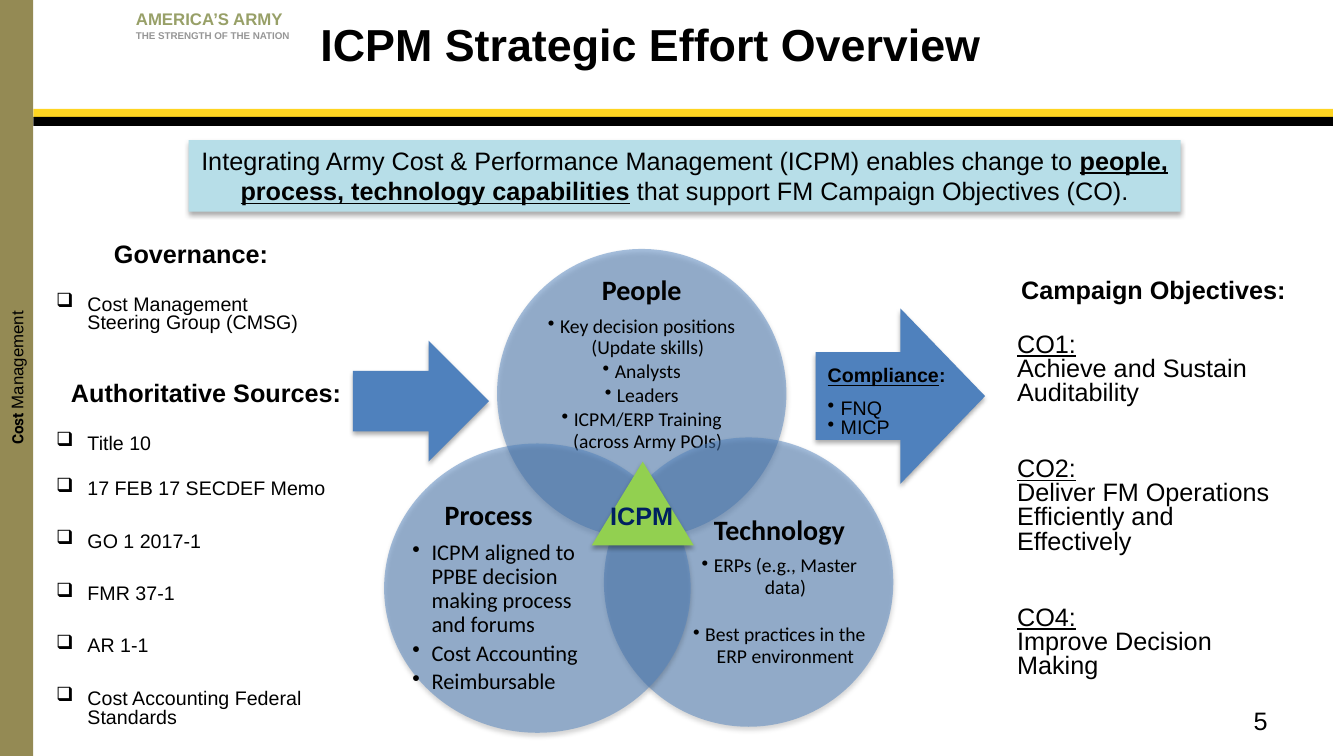
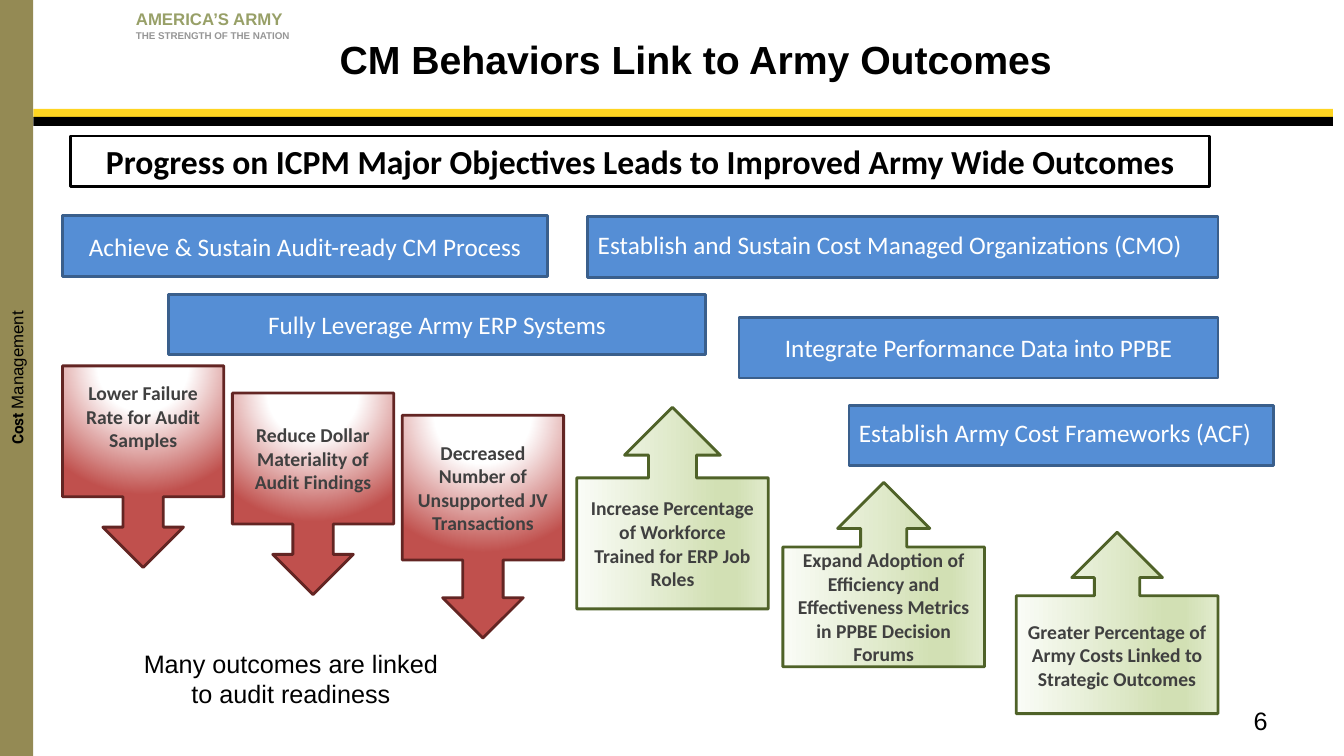
import dataclasses

import pptx
import pptx.dml.color
import pptx.enum.shapes
import pptx.enum.text
import pptx.oxml
import pptx.oxml.ns
import pptx.util

SHAPE = pptx.enum.shapes.MSO_SHAPE
ALIGN = pptx.enum.text.PP_ALIGN
ANCHOR = pptx.enum.text.MSO_ANCHOR
qn = pptx.oxml.ns.qn

# Grid: 75 rows fill the slide height, columns are as wide as rows are high
SLIDE_W, SLIDE_H = pptx.util.Inches(13.33), pptx.util.Inches(7.5)
CELL = SLIDE_H / 75

# Shared colours
BLACK, WHITE = "000000", "FFFFFF"
OLIVE, GOLD = "948A54", "FFD521"
BLUE, PALE_BLUE, GREEN = "4F81BD", "B7DEE8", "92D050"
OBJECTIVE_BLUE, OBJECTIVE_EDGE = "558ED5", "3A5F8C"
RED_EDGE, GREEN_EDGE, OUTCOME_TEXT = "632523", "4F6228", "404040"

# Gradients: stops and direction
RED_GLOW = ([(0, WHITE), (35, WHITE), (100, "C0504D")],
            '<a:path path="circle"><a:fillToRect l="50000" t="-80000" '
            'r="50000" b="180000"/></a:path>')
GREEN_FADE = ([(0, "FAFCF7"), (74, "D2E0B4"), (83, "D2E0B4"), (100, "E1EBCD")],
              '<a:lin ang="5400000" scaled="0"/>')


@dataclasses.dataclass
class Style:
    size: float = 18
    font: str = "Arial"
    color: str = BLACK
    bold: bool = False
    underline: bool = False
    align: object = ALIGN.LEFT
    spacing: float = 1.0
    before: float = 0
    indent: float = 0    # inches
    hanging: float = 0   # inches
    bullet: str = ""

    def but(self, **changes):
        return dataclasses.replace(self, **changes)


BODY = Style()
CENTERED = Style(align=ALIGN.CENTER)
TITLE = Style(bold=True)
TIGHT = Style(spacing=0.8)
HEADING = TIGHT.but(bold=True, align=ALIGN.CENTER)
CHECK = TIGHT.but(size=14, indent=0.31, hanging=0.31, bullet="❑")
CIRCLE_HEAD = Style(20, "Calibri", bold=True, align=ALIGN.CENTER, spacing=0.9)
CIRCLE_ITEM = Style(14, "Calibri", align=ALIGN.CENTER, spacing=0.9, before=2,
                    indent=0.12, hanging=0.12, bullet="•")
OBJECTIVE = Style(18, "Calibri", WHITE, align=ALIGN.CENTER)
OUTCOME = Style(14, "Calibri", OUTCOME_TEXT, bold=True, align=ALIGN.CENTER)


def rgb(color):
    return pptx.dml.color.RGBColor.from_string(color)


def cells(*counts):
    return [round(count * CELL) for count in counts]


def drawing_xml(tag, inner, attributes=""):
    return pptx.oxml.parse_xml(
        f'<a:{tag} {pptx.oxml.ns.nsdecls("a")} {attributes}>{inner}</a:{tag}>')


# Text
def set_font(font, style):
    font.size = pptx.util.Pt(style.size)
    font.name = style.font
    font.bold = style.bold
    font.underline = style.underline
    font.color.rgb = rgb(style.color)


def write(frame, paragraphs, anchor=ANCHOR.TOP, margins=(0.1, 0.05), wrap=True):
    """Each paragraph is (style, text) or (style, [(run style, text), ...])."""
    frame.word_wrap = wrap
    frame.vertical_anchor = anchor
    frame.margin_left = frame.margin_right = pptx.util.Inches(margins[0])
    frame.margin_top = frame.margin_bottom = pptx.util.Inches(margins[1])
    for number, (style, content) in enumerate(paragraphs):
        paragraph = frame.add_paragraph() if number else frame.paragraphs[0]
        properties = paragraph._p.get_or_add_pPr()
        properties.set("marL", str(pptx.util.Inches(style.indent)))
        properties.set("indent", str(-pptx.util.Inches(style.hanging)))
        if style.bullet:
            properties.append(drawing_xml("buChar", "", f'char="{style.bullet}"'))
        paragraph.alignment = style.align
        paragraph.line_spacing = style.spacing
        if number:
            paragraph.space_before = pptx.util.Pt(style.before)
        set_font(paragraph.font, style)
        if isinstance(content, str):
            paragraph.add_run().text = content
            continue
        for run_style, text in content:
            run = paragraph.add_run()
            run.text = text
            set_font(run.font, run_style)


def add_text(slide, area, paragraphs, **layout):
    box = slide.shapes.add_textbox(*cells(*area))
    write(box.text_frame, paragraphs, **layout)


# Shapes
def add_block(slide, kind, area, fill=None, edge=None, gradient=None,
              alpha=None, shadow=False):
    block = slide.shapes.add_shape(kind, *cells(*area))
    block.shadow.inherit = False
    properties = block._element.spPr
    if gradient:
        stops, direction = gradient
        listed = "".join(f'<a:gs pos="{share * 1000}"><a:srgbClr val="{color}"/></a:gs>'
                         for share, color in stops)
        properties.find(qn("a:prstGeom")).addnext(drawing_xml(
            "gradFill", f"<a:gsLst>{listed}</a:gsLst>{direction}", 'rotWithShape="1"'))
    else:
        block.fill.solid()
        block.fill.fore_color.rgb = rgb(fill)
    if alpha:
        next(properties.iter(qn("a:srgbClr"))).append(
            drawing_xml("alpha", "", f'val="{alpha * 1000}"'))
    if edge:
        block.line.color.rgb = rgb(edge)
        block.line.width = pptx.util.Pt(2)
    else:
        block.line.fill.background()
    if shadow:
        properties.find(qn("a:effectLst")).append(drawing_xml(
            "outerShdw",
            f'<a:srgbClr val="{BLACK}"><a:alpha val="32000"/></a:srgbClr>',
            f'blurRad="{pptx.util.Pt(3.5)}" dist="{pptx.util.Pt(2.2)}" '
            'dir="5400000" rotWithShape="0"'))
    return block


def add_circle(slide, area, text_area, paragraphs):
    add_block(slide, SHAPE.OVAL, area, BLUE, alpha=50, shadow=True)
    add_text(slide, text_area, paragraphs, anchor=ANCHOR.MIDDLE, margins=(0, 0))


def add_objective(slide, area, text, style=OBJECTIVE):
    block = add_block(slide, SHAPE.RECTANGLE, area, OBJECTIVE_BLUE, OBJECTIVE_EDGE)
    write(block.text_frame, [(style, text)], anchor=ANCHOR.MIDDLE)


def add_falling_outcome(slide, area, text, lift=0):
    block = add_block(slide, SHAPE.DOWN_ARROW_CALLOUT, area, edge=RED_EDGE,
                      gradient=RED_GLOW)
    write(block.text_frame, [(OUTCOME, text)], anchor=ANCHOR.MIDDLE)
    block.text_frame.margin_bottom += pptx.util.Inches(lift)


def add_rising_outcome(slide, area, text):
    block = add_block(slide, SHAPE.RIGHT_ARROW_CALLOUT, area, edge=GREEN_EDGE,
                      gradient=GREEN_FADE)
    block.rotation = 270
    write(block.text_frame, [(OUTCOME, text)], anchor=ANCHOR.MIDDLE)
    block.text_frame._txBody.bodyPr.set("vert", "vert")


# Parts that all slides share
def add_slide(deck, title, title_area, title_style, number):
    slide = deck.slides.add_slide(deck.slide_layouts[6])
    add_text(slide, (12.5, 0, 26.7, 5),
             [(Style(12, color="98A068", bold=True), "AMERICA’S ARMY"),
              (Style(7, color="969696", bold=True), "THE STRENGTH OF THE NATION")],
             anchor=ANCHOR.MIDDLE, wrap=False)
    for top, color in ((10.8, GOLD), (11.6, BLACK)):
        add_block(slide, SHAPE.RECTANGLE, (3.3, top, 128.9, 0.9), color)
    strip = add_block(slide, SHAPE.RECTANGLE, (0, 0, 3.3, 75), OLIVE)
    write(strip.text_frame,
          [(CENTERED.but(size=12), [(Style(11, "Roboto", bold=True), "Cost "),
                                    (Style(12), "Management")])],
          anchor=ANCHOR.MIDDLE, margins=(0.04, 0.04))
    strip.text_frame._txBody.bodyPr.set("vert", "vert270")
    add_text(slide, title_area, [(title_style, title)])
    add_text(slide, (95.6, 69.5, 31.1, 4), [(BODY.but(align=ALIGN.RIGHT), str(number))])
    return slide


def build_overview(deck):
    slide = add_slide(deck, "ICPM Strategic Effort Overview", (30.8, 1.2, 73.3, 6.4),
                      TITLE.but(size=32), 5)

    # Banner
    banner = add_block(slide, SHAPE.RECTANGLE, (18.7, 13.9, 98.4, 7.1), PALE_BLUE,
                       shadow=True)
    write(banner.text_frame, [(CENTERED, [
        (BODY, "Integrating Army Cost & Performance Management (ICPM) enables change to "),
        (BODY.but(bold=True, underline=True), "people, process, technology capabilities"),
        (BODY, " that support FM Campaign Objectives (CO).")])])

    # Campaign objectives
    objectives = [("CO1:", "Achieve and Sustain Auditability"),
                  ("CO2:", "Deliver FM Operations Efficiently and Effectively"),
                  ("CO4:", "Improve Decision Making")]
    lines = [(HEADING, "Campaign Objectives:")]
    for code, aim in objectives:
        gap = 21 if len(lines) == 1 else 37
        lines += [(TIGHT.but(underline=True, before=gap), code), (TIGHT, aim)]
    add_text(slide, (99.9, 27.3, 29, 42.7), lines)

    # Overlapping circles
    add_circle(slide, (49.3, 24.7, 28.7, 28.7), (53.1, 29.7, 21.1, 12.9), [
        (CIRCLE_HEAD, "People"),
        (CIRCLE_ITEM.but(before=7), "Key decision positions (Update skills)"),
        (CIRCLE_ITEM, "Analysts"),
        (CIRCLE_ITEM, "Leaders"),
        (CIRCLE_ITEM, "ICPM/ERP Training (across Army POIs)")])
    add_circle(slide, (59.9, 43.4, 28.7, 28.7), (68.7, 50.8, 17.2, 15.8), [
        (CIRCLE_HEAD, "Technology"),
        (CIRCLE_ITEM.but(before=7), "ERPs (e.g., Master data)"),
        (CIRCLE_ITEM.but(before=19), "Best practices in the ERP environment")])
    process_item = CIRCLE_ITEM.but(size=16, align=ALIGN.LEFT, before=3,
                                   indent=0.19, hanging=0.19)
    add_circle(slide, (38.1, 44, 30.4, 28.7), (40.9, 51.4, 18.2, 15.8), [
        (CIRCLE_HEAD.but(align=ALIGN.LEFT, indent=0.32), "Process"),
        (process_item.but(before=7),
         "ICPM aligned to PPBE decision making process and forums"),
        (process_item, "Cost Accounting"),
        (process_item, "Reimbursable")])

    # Arrows into and out of the circles
    for area in ((80.9, 30.6, 16.8, 17.4), (35, 33.8, 13.5, 12)):
        add_block(slide, SHAPE.RIGHT_ARROW, area, BLUE, shadow=True)
    compliance = TIGHT.but(size=14, bold=True)
    result = TIGHT.but(size=14, indent=0.13, hanging=0.13, bullet="•")
    add_text(slide, (81.1, 36, 18.5, 9.8), [
        (compliance, [(compliance.but(underline=True), "Compliance"), (compliance, ":")]),
        (result.but(before=10), "FNQ"),
        (result, "MICP")])

    # Centre triangle
    add_block(slide, SHAPE.ISOSCELES_TRIANGLE, (58.7, 45.8, 10.1, 8.3), GREEN, shadow=True)
    add_text(slide, (59.5, 49.1, 8.3, 4),
             [(CENTERED.but(color="002060", bold=True), "ICPM")], wrap=False)

    # Governance and sources
    add_text(slide, (4.6, 23.7, 28.7, 11.2), [
        (HEADING, "Governance:"),
        (CHECK.but(before=20), "Cost Management Steering Group (CMSG)")])
    sources = ["GO 1 2017-1", "FMR 37-1", "AR 1-1", "Cost Accounting Federal Standards"]
    add_text(slide, (4.6, 37.5, 31.7, 34.9), [
        (HEADING, "Authoritative Sources:"),
        (CHECK.but(before=20), "Title 10"),
        (CHECK.but(before=19), "17 FEB 17 SECDEF Memo"),
        *((CHECK.but(before=24), source) for source in sources)])


def build_outcomes(deck):
    slide = add_slide(deck, "CM Behaviors Link to Army Outcomes", (26.3, 3, 85.4, 6.2),
                      TITLE.but(size=28, align=ALIGN.CENTER), 6)

    # Headline
    headline = add_block(slide, SHAPE.RECTANGLE, (7, 13.5, 113, 5), WHITE, BLACK)
    write(headline.text_frame, [
        (Style(24, "Calibri", bold=True, align=ALIGN.CENTER),
         "Progress on ICPM Major Objectives Leads to Improved Army Wide Outcomes")])

    # Outcomes that fall
    falling = [(36.3, 20, "Lower Failure Rate for Audit Samples", 0.3),
               (39, 20, "Reduce Dollar Materiality of Audit Findings", 0),
               (41.2, 22.1, "Decreased Number of Unsupported JV Transactions", 0)]
    for column, (top, height, text, lift) in enumerate(falling):
        add_falling_outcome(slide, (6.2 + 16.85 * column, top, 16, height), text, lift)

    # Outcomes that rise
    rising = [
        ((56.7, 40.9, 20, 19), "Increase Percentage of Workforce Trained for ERP Job Roles"),
        ((78.5, 47, 18.3, 20),
         "Expand Adoption of Efficiency and Effectiveness Metrics in PPBE Decision Forums"),
        ((101.8, 51.8, 18, 20),
         "Greater Percentage of Army Costs Linked to Strategic Outcomes")]
    for area, text in rising:
        add_rising_outcome(slide, area, text)

    # Objectives
    flush = OBJECTIVE.but(align=ALIGN.LEFT, spacing=0.8)
    add_objective(slide, (6.2, 21.4, 48.1, 6), "Achieve & Sustain Audit-ready CM Process")
    add_objective(slide, (16.7, 29.2, 53.3, 6), "Fully Leverage Army ERP Systems")
    add_objective(slide, (73.3, 31.5, 47.5, 6), "Integrate Performance Data into PPBE")
    add_objective(slide, (84.2, 40.2, 42.1, 6), "Establish Army Cost Frameworks (ACF)", flush)
    add_objective(slide, (58.3, 21.5, 62.5, 6),
                  "Establish and Sustain Cost Managed Organizations (CMO)", flush)

    # Remark
    add_text(slide, (12.5, 63.8, 32.7, 7.1),
             [(CENTERED, "Many outcomes are linked to audit readiness")])


def main():
    deck = pptx.Presentation()
    deck.slide_width, deck.slide_height = SLIDE_W, SLIDE_H
    build_overview(deck)
    build_outcomes(deck)
    deck.save("out.pptx")


if __name__ == "__main__":
    main()
